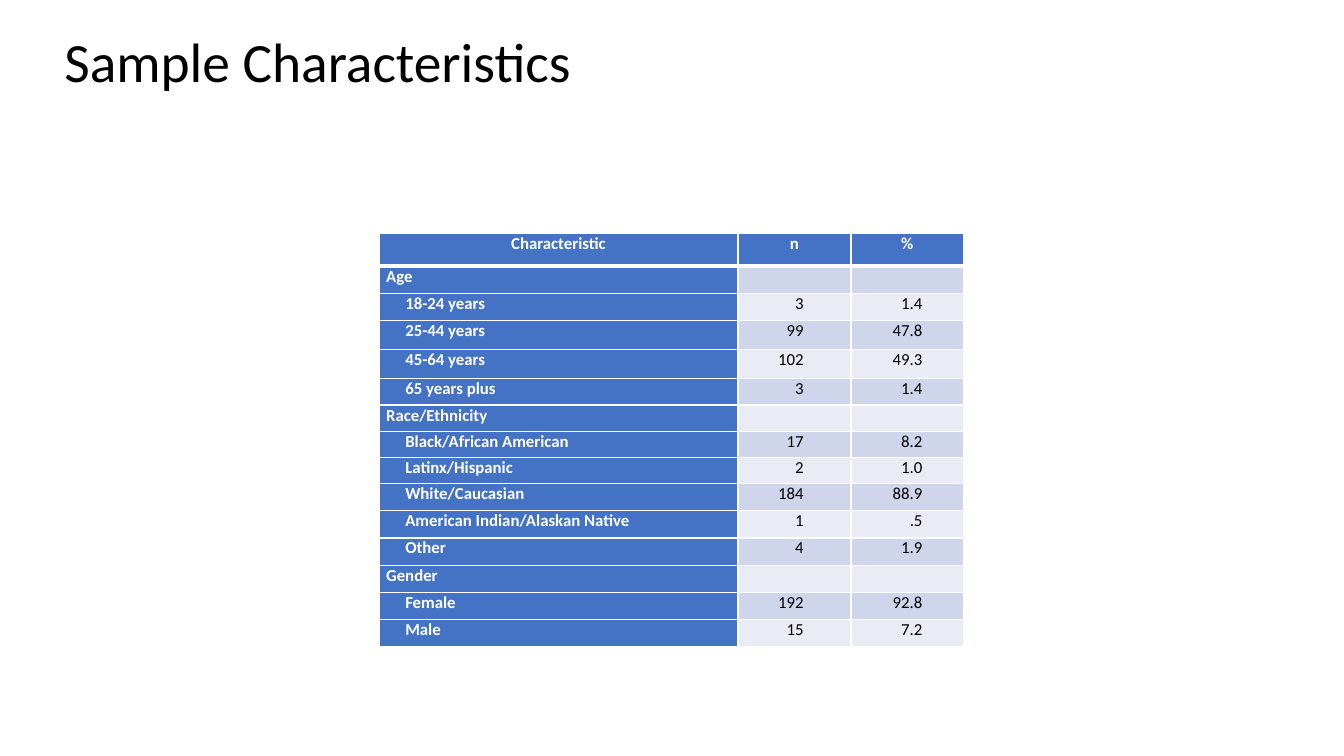
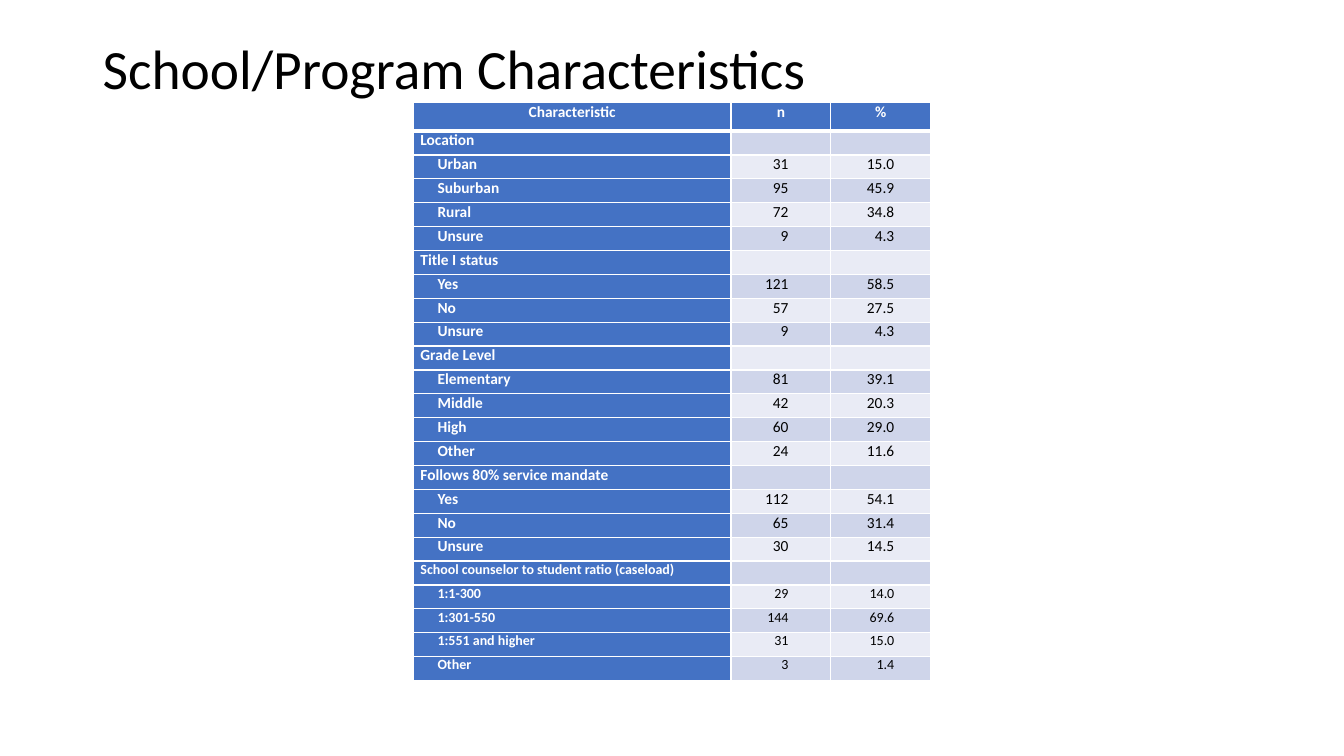
from lxml import etree
from pptx import Presentation
from pptx.dml.color import RGBColor
from pptx.enum.text import MSO_ANCHOR, PP_ALIGN
from pptx.oxml.ns import qn
from pptx.util import Pt

LEFT, CENTER, RIGHT = PP_ALIGN.LEFT, PP_ALIGN.CENTER, PP_ALIGN.RIGHT
MIDDLE = MSO_ANCHOR.MIDDLE

# Shared style; 100 px make one inch
EMU_PER_PX = 9144
FONT = "Calibri"
BLACK, WHITE, BLUE = "000000", "FFFFFF", "4472C4"
BANDS = ("E9EBF5", "CFD5EA")
TITLE_SIZE = 39.6
CELL_INSET = 7
THIN, THICK = 1, 3
HEADERS = ("Characteristic", "n", "%")

# Each group: heading, text size, rows of label, n and percent
SAMPLE_GROUPS = [
    ("Age", 12, [
        ("18-24 years", "3", "1.4"),
        ("25-44 years", "99", "47.8"),
        ("45-64 years", "102", "49.3"),
        ("65 years plus", "3", "1.4"),
    ]),
    ("Race/Ethnicity", 12, [
        ("Black/African American", "17", "8.2"),
        ("Latinx/Hispanic", "2", "1.0"),
        ("White/Caucasian", "184", "88.9"),
        ("American Indian/Alaskan Native", "1", ".5"),
        ("Other", "4", "1.9"),
    ]),
    ("Gender", 12, [
        ("Female", "192", "92.8"),
        ("Male", "15", "7.2"),
    ]),
]
SCHOOL_GROUPS = [
    ("Location", 11, [
        ("Urban", "31", "15.0"),
        ("Suburban", "95", "45.9"),
        ("Rural", "72", "34.8"),
        ("Unsure", "9", "4.3"),
    ]),
    ("Title I status", 11, [
        ("Yes", "121", "58.5"),
        ("No", "57", "27.5"),
        ("Unsure", "9", "4.3"),
    ]),
    ("Grade Level", 11, [
        ("Elementary", "81", "39.1"),
        ("Middle", "42", "20.3"),
        ("High", "60", "29.0"),
        ("Other", "24", "11.6"),
    ]),
    ("Follows 80% service mandate", 11, [
        ("Yes", "112", "54.1"),
        ("No", "65", "31.4"),
        ("Unsure", "30", "14.5"),
    ]),
    ("School counselor to student ratio (caseload)", 10, [
        ("1:1-300", "29", "14.0"),
        ("1:301-550", "144", "69.6"),
        ("1:551 and higher", "31", "15.0"),
        ("Other", "3", "1.4"),
    ]),
]


def px(length):
    return int(length * EMU_PER_PX)


def color(hex_string):
    return RGBColor.from_string(hex_string)


def style_run(run, size, hex_string, bold=False):
    run.font.name = FONT
    run.font.size = Pt(size)
    run.font.bold = bold
    run.font.color.rgb = color(hex_string)


def add_title(slide, box, text):
    frame = slide.shapes.add_textbox(*map(px, box)).text_frame
    frame.word_wrap = True
    frame.vertical_anchor = MIDDLE
    paragraph = frame.paragraphs[0]
    paragraph.text = text
    paragraph.line_spacing = 0.9
    style_run(paragraph.runs[0], TITLE_SIZE, BLACK)


def set_borders(cell, top, bottom):
    properties = cell._tc.get_or_add_tcPr()
    sides = (("lnL", THIN), ("lnR", THIN), ("lnT", top), ("lnB", bottom))
    for position, (side, width) in enumerate(sides):
        line = etree.Element(qn(f"a:{side}"), w=str(Pt(width)))
        fill = etree.SubElement(line, qn("a:solidFill"))
        etree.SubElement(fill, qn("a:srgbClr"), val=WHITE)
        properties.insert(position, line)


def fill_cell(cell, text, size, fill, text_color, alignment, insets):
    cell.fill.solid()
    cell.fill.fore_color.rgb = color(fill)
    cell.margin_left, cell.margin_right = map(px, insets)
    cell.margin_top = cell.margin_bottom = 0
    paragraph = cell.text_frame.paragraphs[0]
    paragraph.alignment = alignment
    if text:
        paragraph.text = text
        style_run(paragraph.runs[0], size, text_color, bold=fill == BLUE)
    else:
        # An empty cell needs a small text size to keep its row low
        etree.SubElement(paragraph._p, qn("a:endParaRPr"), sz=str(size * 100))


def add_characteristics_table(slide, origin, widths, heights, groups, indent, number_insets):
    # Flatten the groups into rows: size, label inset, texts
    rows = []
    for heading, size, details in groups:
        rows.append((size, CELL_INSET, (heading, "", "")))
        rows += [(size, CELL_INSET + indent, texts) for texts in details]

    box = (*origin, sum(widths), sum(heights))
    table = slide.shapes.add_table(len(rows) + 1, len(widths), *map(px, box)).table
    table.first_row = table.horz_banding = False
    for column, width in zip(table.columns, widths):
        column.width = px(width)
    for row, height in zip(table.rows, heights):
        row.height = px(height)

    # Header row
    for column, text in enumerate(HEADERS):
        cell = table.cell(0, column)
        fill_cell(cell, text, groups[0][1], BLUE, WHITE, CENTER, (CELL_INSET, CELL_INSET))
        set_borders(cell, THIN, THICK)

    # Label column and banded number columns
    for index, (size, label_inset, texts) in enumerate(rows, start=1):
        for column, text in enumerate(texts):
            cell = table.cell(index, column)
            if column == 0:
                fill_cell(cell, text, size, BLUE, WHITE, LEFT, (label_inset, CELL_INSET))
            else:
                insets = (CELL_INSET, number_insets[column - 1])
                fill_cell(cell, text, size, BANDS[index % 2], BLACK, RIGHT, insets)
            set_borders(cell, THICK if index == 1 else THIN, THIN)


def add_characteristics_slide(presentation, title, title_box, **table):
    slide = presentation.slides.add_slide(presentation.slide_layouts[6])
    add_title(slide, title_box, title)
    add_characteristics_table(slide, **table)


def main():
    presentation = Presentation()
    presentation.slide_width = px(1333)
    presentation.slide_height = px(750)
    add_characteristics_slide(
        presentation, "Sample Characteristics", (54, 26, 1150, 76),
        origin=(376, 232), widths=(356, 112, 112),
        heights=[32] + [27] * 2 + [29] * 2 + [26] * 4 + [27] * 6,
        groups=SAMPLE_GROUPS, indent=19, number_insets=(47, 41))
    add_characteristics_slide(
        presentation, "School/Program Characteristics", (92, 40, 1150, 62),
        origin=(410, 102), widths=(315, 99, 99),
        heights=[28] + [546 / 23] * 23,
        groups=SCHOOL_GROUPS, indent=17, number_insets=(42, 36))
    presentation.save("out.pptx")


if __name__ == "__main__":
    main()
